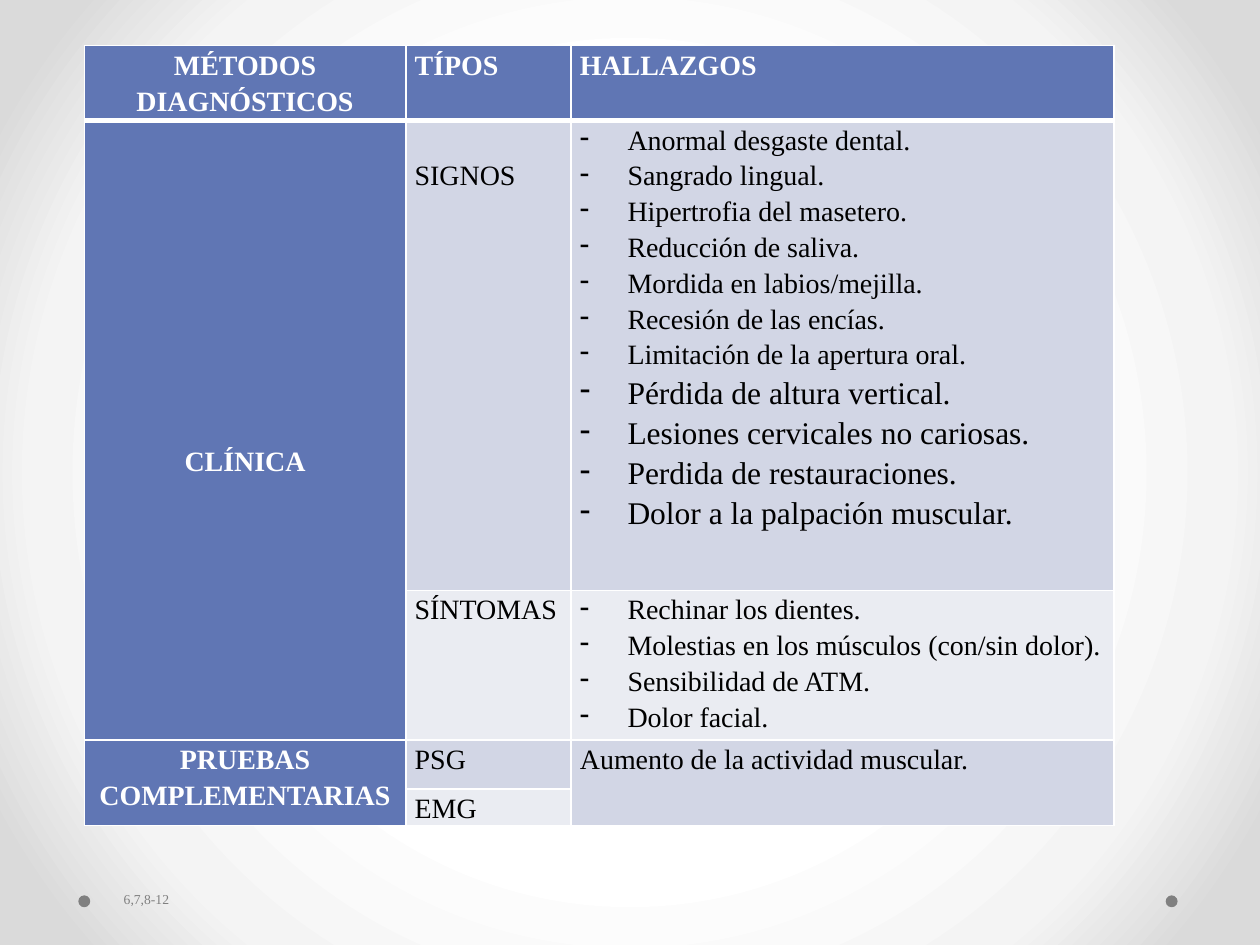
"""Build a slide with a table of diagnostic methods for bruxism."""
from lxml import etree
from pptx import Presentation
from pptx.dml.color import RGBColor
from pptx.enum.shapes import MSO_SHAPE
from pptx.enum.text import MSO_ANCHOR, PP_ALIGN
from pptx.oxml.ns import qn
from pptx.util import Cm, Pt

LEFT, CENTER = PP_ALIGN.LEFT, PP_ALIGN.CENTER
BOTTOM = MSO_ANCHOR.BOTTOM
OVAL = MSO_SHAPE.OVAL

FONT = "Times New Roman"
WHITE, BLACK, GRAY = "FFFFFF", "000000", "808080"
BLUE, BAND, LIGHT_BAND = "6076B4", "D2D6E5", "EAECF2"
BACKGROUND_STOPS = [(50, WHITE), (76, "F4F4F4"), (92, "DADADA")]

COLUMN_WIDTHS = [6.48, 3.33, 10.95]
ROW_HEIGHTS = [1.51, 9.47, 3.02, 0.99, 0.73]
LINE_HEIGHT = 0.72
HEADERS = ["MÉTODOS DIAGNÓSTICOS", "TÍPOS", "HALLAZGOS"]
SIGNS = [
    "Anormal desgaste dental.",
    "Sangrado lingual.",
    "Hipertrofia del masetero.",
    "Reducción de saliva.",
    "Mordida en labios/mejilla.",
    "Recesión de las encías.",
    "Limitación de la apertura oral.",
]
LARGE_SIGNS = [
    "Pérdida de altura vertical.",
    "Lesiones cervicales no cariosas.",
    "Perdida de restauraciones.",
    "Dolor a la palpación muscular.",
]
SYMPTOMS = [
    "Rechinar los dientes.",
    "Molestias en los músculos (con/sin dolor).",
    "Sensibilidad de ATM.",
    "Dolor facial.",
]


def color(value):
    """Return the colour for a hex string."""
    return RGBColor.from_string(value)


def add_element(parent, tag, **attributes):
    """Append an XML element and return it."""
    return etree.SubElement(parent, qn(tag), **attributes)


def write_text(paragraph, text, size=16, fill=BLACK, bold=False, align=LEFT,
               spacing=1.15, bullet=None):
    """Write formatted text into a paragraph."""
    paragraph.alignment = align
    paragraph.line_spacing = spacing
    run = paragraph.add_run()
    run.text = text
    run.font.name = FONT
    run.font.size = Pt(size)
    run.font.bold = bold
    run.font.color.rgb = color(fill)
    properties = paragraph._p.get_or_add_pPr()
    indent = Cm(0.96) if bullet else 0
    properties.set("marL", str(indent))
    properties.set("indent", str(-indent))
    if bullet:
        add_element(properties, "a:buChar", char=bullet)
    else:
        add_element(properties, "a:buNone")


def set_background(slide):
    """Fill the background with a circular gradient."""
    slide.background.fill.gradient()
    gradient = slide.element.find(".//" + qn("a:gradFill"))
    for child in list(gradient):
        gradient.remove(child)
    stops = add_element(gradient, "a:gsLst")
    for position, value in BACKGROUND_STOPS:
        stop = add_element(stops, "a:gs", pos=str(position * 1000))
        add_element(stop, "a:srgbClr", val=value)
    circle = add_element(gradient, "a:path", path="circle")
    add_element(circle, "a:fillToRect", l="50000", t="50000", r="50000", b="50000")


def add_dot(slide, left):
    """Add a gray dot at the foot of the slide."""
    dot = slide.shapes.add_shape(OVAL, Cm(left), Cm(18.05), Cm(0.24), Cm(0.24))
    dot.shadow.inherit = False
    dot.fill.solid()
    dot.fill.fore_color.rgb = color(GRAY)
    dot.line.fill.background()


def style_cell(cell, fill, top_width=1, bottom_width=1):
    """Set the borders, margins and fill of a cell."""
    properties = cell._tc.get_or_add_tcPr()
    widths = {"L": 1, "R": 1, "T": top_width, "B": bottom_width}
    for side, width in widths.items():
        line = add_element(properties, f"a:ln{side}", w=str(Pt(width)))
        solid = add_element(line, "a:solidFill")
        add_element(solid, "a:srgbClr", val=WHITE)
    cell.margin_left = cell.margin_right = Cm(0.18)
    cell.margin_top = cell.margin_bottom = 0
    cell.fill.solid()
    cell.fill.fore_color.rgb = color(fill)


def write_cell(cell, lines, lines_above=0, **text_format):
    """Write one paragraph per line, starting below some free lines."""
    cell.margin_top = Cm(lines_above * LINE_HEIGHT)
    frame = cell.text_frame
    for line in lines:
        first = not frame.paragraphs[0].runs
        paragraph = frame.paragraphs[0] if first else frame.add_paragraph()
        write_text(paragraph, line, **text_format)


def add_grid(slide):
    """Add the empty styled table and return it."""
    frame = slide.shapes.add_table(
        len(ROW_HEIGHTS), len(COLUMN_WIDTHS), Cm(1.7), Cm(0.92),
        Cm(sum(COLUMN_WIDTHS)), Cm(sum(ROW_HEIGHTS)))
    table = frame.table
    table.horz_banding = False
    for column, width in zip(table.columns, COLUMN_WIDTHS):
        column.width = Cm(width)
    for index, (row, height) in enumerate(zip(table.rows, ROW_HEIGHTS)):
        row.height = Cm(height)
        band = BAND if index % 2 else LIGHT_BAND
        for position, cell in enumerate(row.cells):
            style_cell(cell, BLUE if index == 0 or position == 0 else band,
                       top_width=3 if index == 1 else 1,
                       bottom_width=3 if index == 0 else 1)
    for top, column in [(1, 0), (3, 0), (3, 2)]:
        table.cell(top, column).merge(table.cell(top + 1, column))
    return table


def fill_table(table):
    """Write the methods, types and findings."""
    heading = {"fill": WHITE, "bold": True}
    for column, text in enumerate(HEADERS):
        write_cell(table.cell(0, column), [text],
                   align=LEFT if column else CENTER, **heading)
    write_cell(table.cell(1, 0), ["CLÍNICA"], lines_above=9, align=CENTER, **heading)
    write_cell(table.cell(3, 0), ["PRUEBAS COMPLEMENTARIAS"], align=CENTER, **heading)
    write_cell(table.cell(1, 1), ["SIGNOS"], lines_above=1)
    for row, text in enumerate(["SÍNTOMAS", "PSG", "EMG"], start=2):
        write_cell(table.cell(row, 1), [text])
    write_cell(table.cell(1, 2), SIGNS, bullet="-")
    write_cell(table.cell(1, 2), LARGE_SIGNS, size=18, bullet="-")
    write_cell(table.cell(2, 2), SYMPTOMS, bullet="-")
    write_cell(table.cell(3, 2), ["Aumento de la actividad muscular."])


def write_references(placeholder):
    """Place the reference numbers in the body placeholder."""
    placeholder.left, placeholder.top = Cm(2.24), Cm(16.92)
    placeholder.width, placeholder.height = Cm(20.07), Cm(1.5)
    frame = placeholder.text_frame
    frame.vertical_anchor = BOTTOM
    write_text(frame.paragraphs[0], "6,7,8-12", size=7.8, fill=GRAY, spacing=1.05)


def main():
    """Build and save the presentation."""
    presentation = Presentation()
    presentation.slide_width, presentation.slide_height = Cm(25.4), Cm(19.05)
    slide = presentation.slides.add_slide(presentation.slide_layouts[1])
    title = slide.shapes.title.element
    title.getparent().remove(title)
    set_background(slide)
    for left in (23.5, 1.58):
        add_dot(slide, left)
    fill_table(add_grid(slide))
    write_references(slide.placeholders[1])
    presentation.save("out.pptx")


if __name__ == "__main__":
    main()
